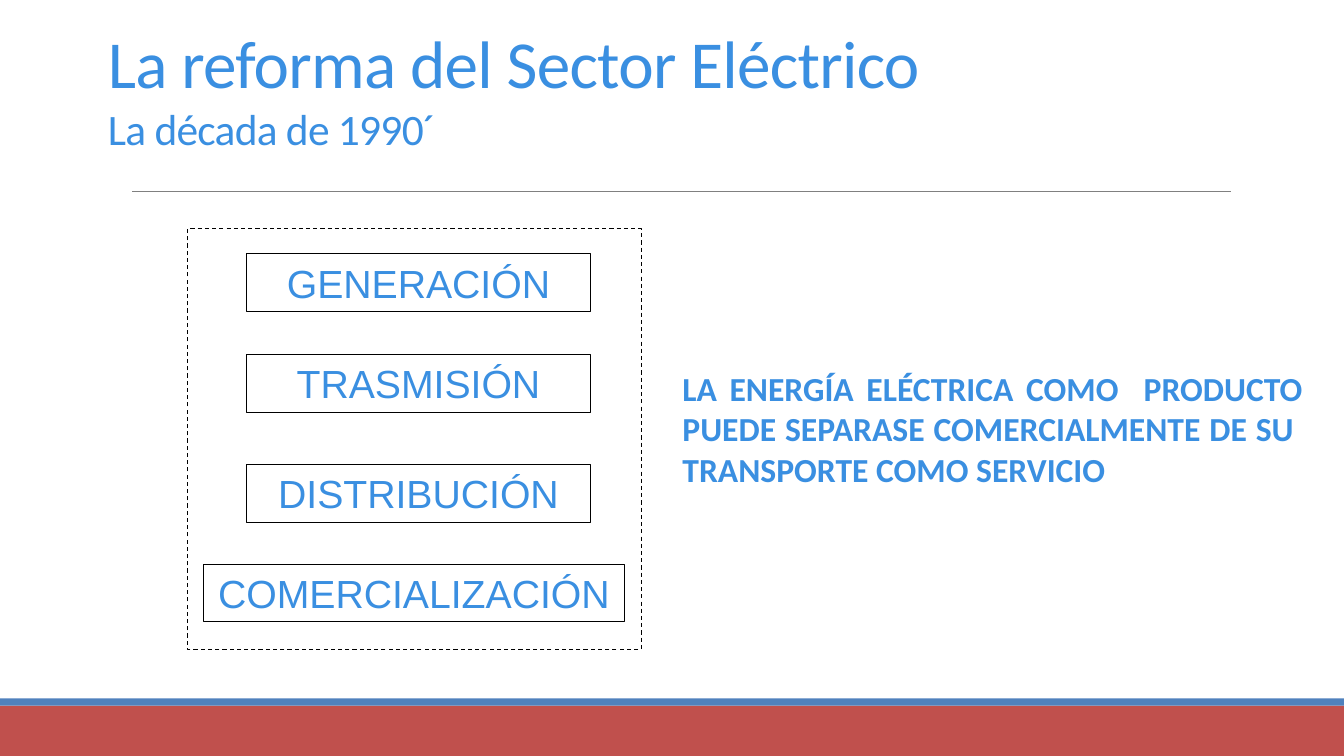
"""Build the slide on the reform of the electricity sector."""
from typing import NamedTuple, Optional

from lxml import etree
from pptx import Presentation
from pptx import util as u
from pptx.dml.color import RGBColor
from pptx.enum import dml, shapes, text
from pptx.oxml import ns

SCALE = 9144
BLUE = "3A8FE1"
BLACK = "000000"


class Box(NamedTuple):
    """A rectangle in px with its fill, outline and label."""
    left: int
    top: int
    width: int
    height: int
    fill: Optional[str] = None
    line: Optional[str] = None
    label: str = ""
    dash: bool = False


STAGES = [
    Box(244, 252, 342, 57, line=BLACK, label="GENERACIÓN"),
    Box(244, 352, 342, 57, line=BLACK, label="TRASMISIÓN"),
    Box(244, 461, 342, 57, line=BLACK, label="DISTRIBUCIÓN"),
    Box(202, 560, 417, 57, line=BLACK, label="COMERCIALIZACIÓN"),
]
BANDS = [
    Box(0, 700, 1333, 50, fill="C0504D"),
    Box(0, 693, 1333, 7, fill="4F81BD"),
]
FRAME = Box(186, 227, 450, 417, line=BLACK, dash=True)


def px(num: int) -> u.Emu:
    """Turn px into EMU."""
    return u.Emu(num * SCALE)


def paint(color, code: str) -> None:
    """Set a colour format from a hex string."""
    color.rgb = RGBColor.from_string(code)


def write(frame, words: str, size: int, font: str = "Calibri", bold: bool = False,
          align=text.PP_ALIGN.LEFT, space: int = 0) -> None:
    """Add a formatted run to the first paragraph of a text frame."""
    frame.word_wrap = True
    para = frame.paragraphs[0]
    para.alignment = align
    run = para.add_run()
    run.text = words
    run.font.size = u.Pt(size)
    run.font.name = font
    run.font.bold = bold
    paint(run.font.color, BLUE)
    if space:
        run.font._element.set("spc", str(space))


def draw(slide, box: Box) -> None:
    """Draw a rectangle with its label."""
    shape = slide.shapes.add_shape(
        shapes.MSO_SHAPE.RECTANGLE, *map(px, box[:4]))
    shape.shadow.inherit = False
    if box.fill:
        shape.fill.solid()
        paint(shape.fill.fore_color, box.fill)
    else:
        shape.fill.background()
    if box.line:
        paint(shape.line.color, box.line)
        shape.line.width = u.Pt(0.75)
    else:
        shape.line.fill.background()
    if box.dash:
        shape.line.dash_style = dml.MSO_LINE.DASH
    if box.label:
        shape.text_frame.vertical_anchor = text.MSO_ANCHOR.TOP
        write(shape.text_frame, box.label, 28, font="Arial",
              align=text.PP_ALIGN.CENTER)


def rule(slide) -> None:
    """Draw the thin line under the title."""
    line = slide.shapes.add_connector(
        shapes.MSO_CONNECTOR.STRAIGHT, px(131), px(190), px(1221), px(190))
    paint(line.line.color, "808080")
    line.line.width = u.Pt(0.5)
    etree.SubElement(line._element.spPr, ns.qn("a:effectLst"))


def head(slide) -> None:
    """Place the title and its second line."""
    title = slide.shapes.title
    title.left, title.top, title.width, title.height = map(px, (97, 67, 901, 88))
    frame = title.text_frame
    frame.auto_size = text.MSO_AUTO_SIZE.NONE
    frame.vertical_anchor = text.MSO_ANCHOR.BOTTOM
    frame.margin_bottom = px(2)
    write(frame, "La reforma del Sector Eléctrico", 48, space=-50)
    frame.paragraphs[0].add_line_break()
    write(frame, "La década de 1990´", 31, space=-50)


def main() -> None:
    """Build and save the slide."""
    deck = Presentation()
    deck.slide_width, deck.slide_height = px(1333), px(750)
    slide = deck.slides.add_slide(deck.slide_layouts[5])
    for band in BANDS:
        draw(slide, band)
    rule(slide)
    head(slide)
    for box in [*STAGES, FRAME]:
        draw(slide, box)
    note = slide.shapes.add_textbox(*map(px, (667, 360, 635, 130)))
    write(note.text_frame,
          "LA ENERGÍA ELÉCTRICA COMO  PRODUCTO PUEDE SEPARASE "
          "COMERCIALMENTE DE SU  TRANSPORTE COMO SERVICIO",
          24, bold=True, align=text.PP_ALIGN.JUSTIFY)
    deck.save("out.pptx")


if __name__ == "__main__":
    main()
